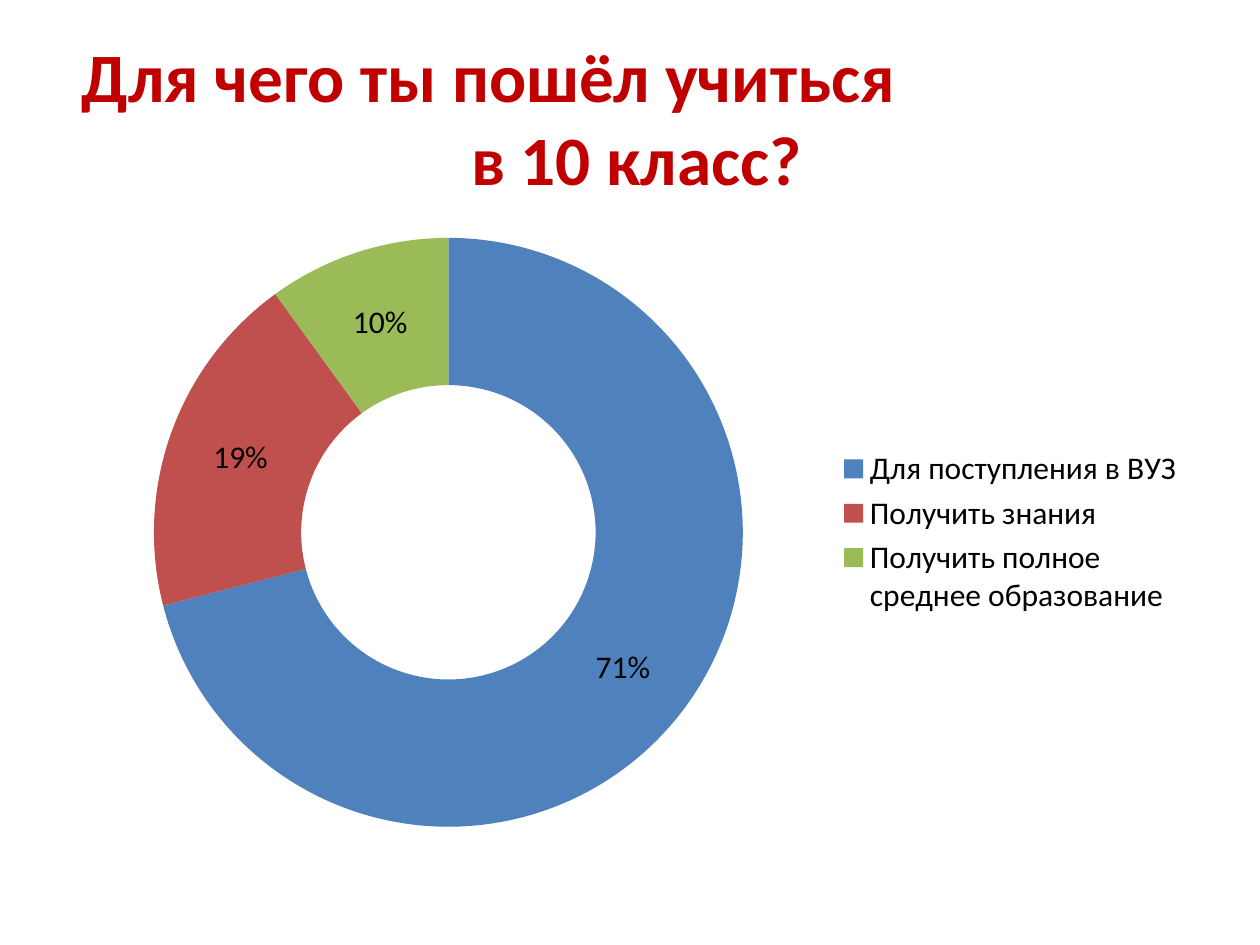
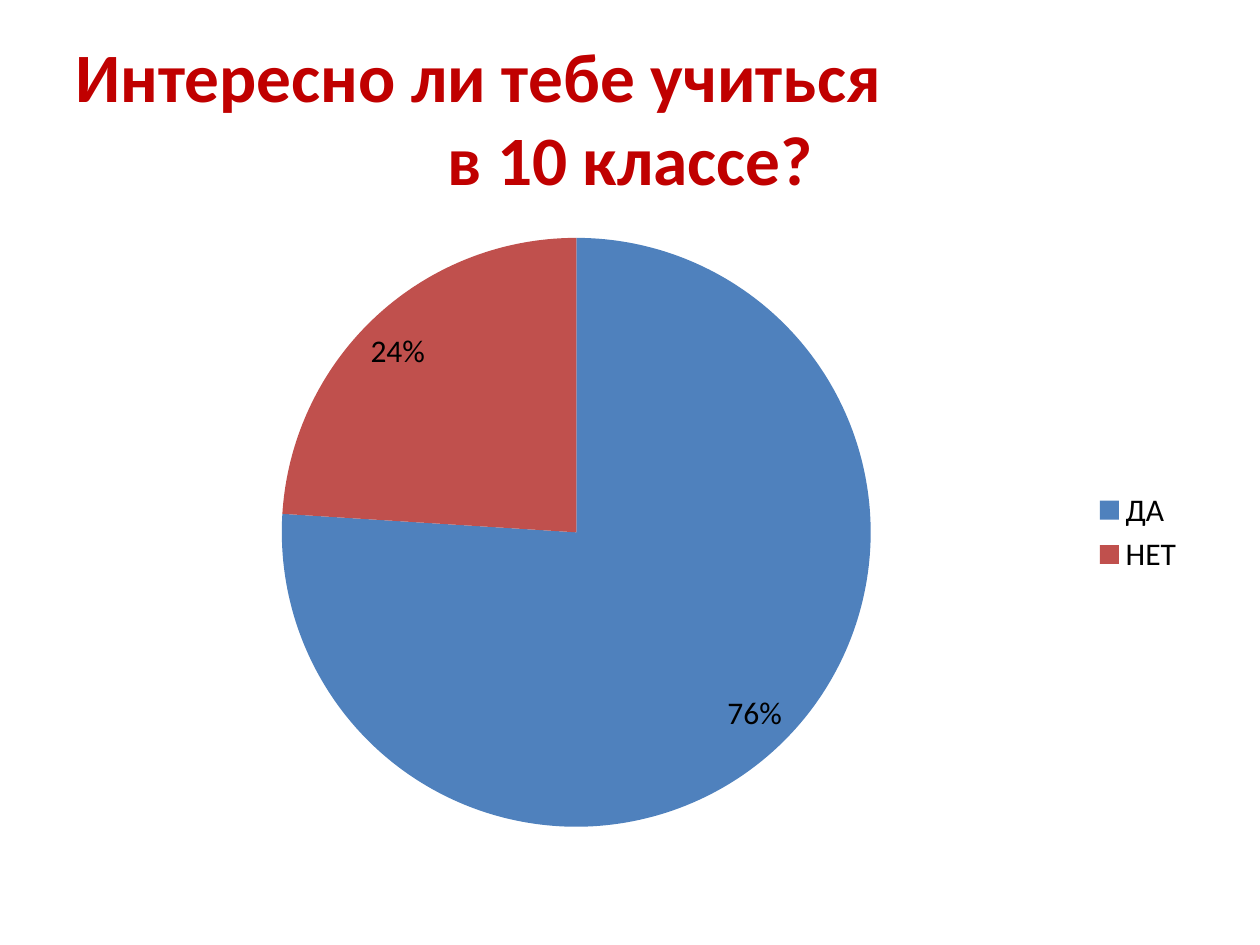
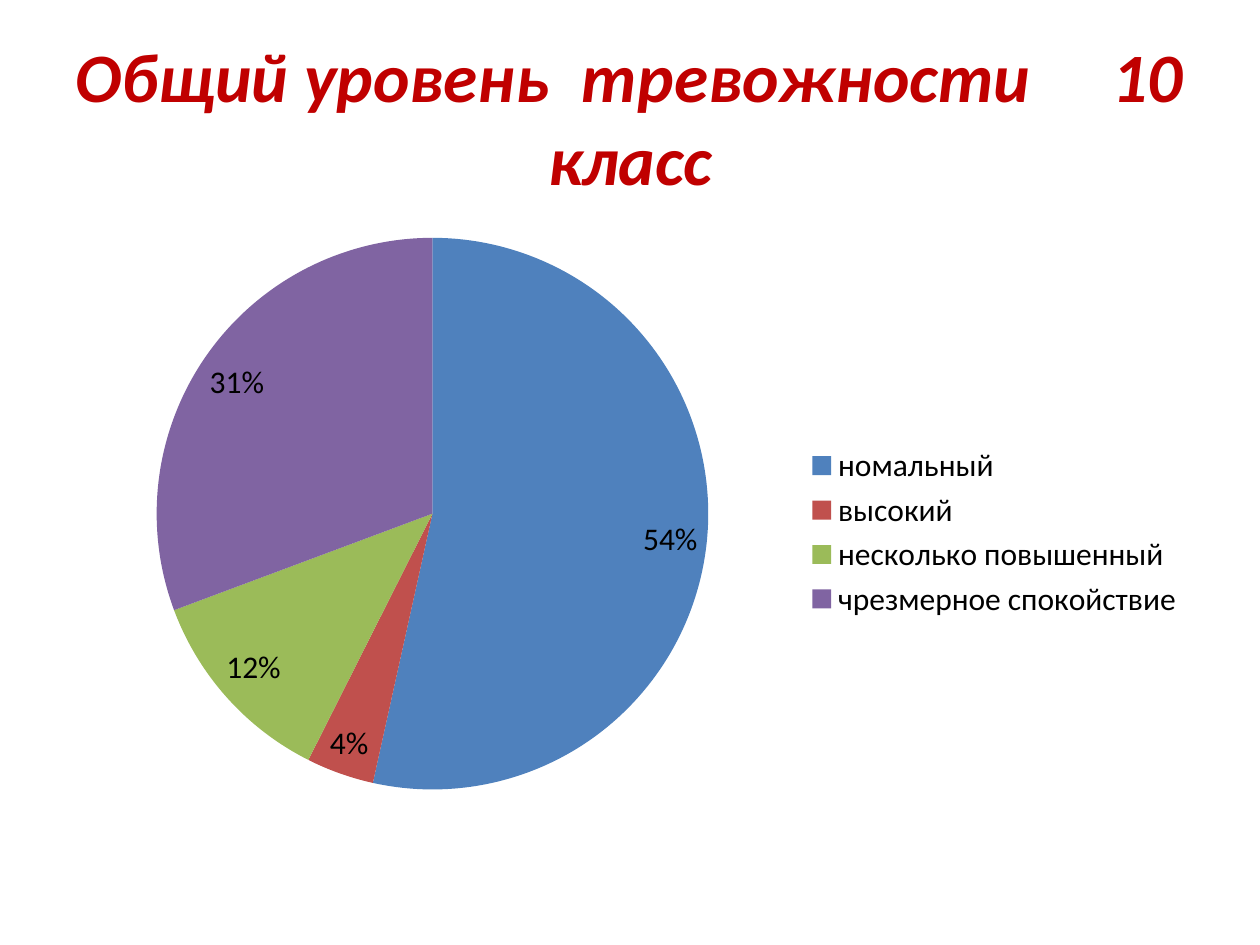
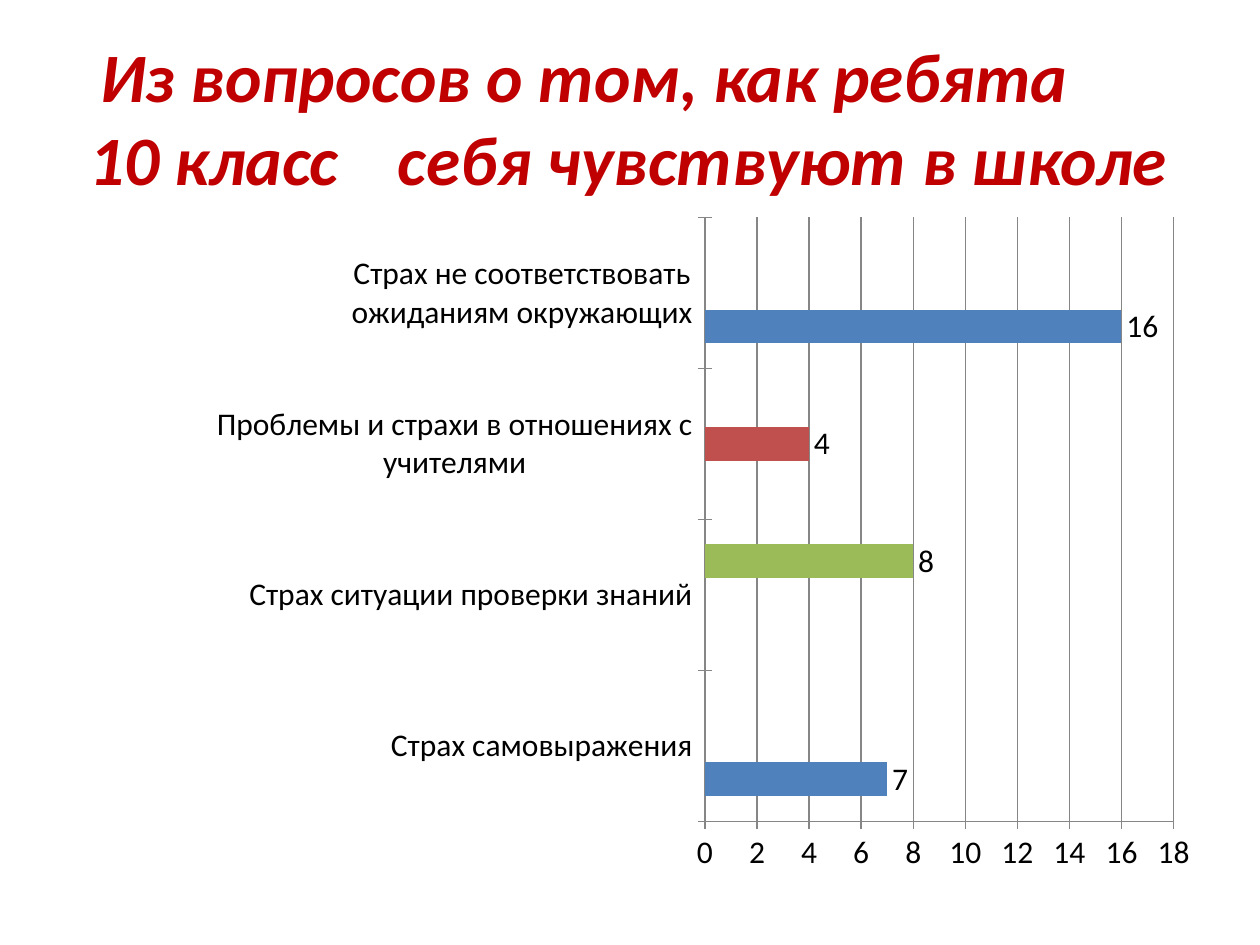
from dataclasses import dataclass

from lxml import etree
from pptx import Presentation
from pptx.chart.data import CategoryChartData
from pptx.dml.color import RGBColor
from pptx.enum.chart import XL_CHART_TYPE, XL_LEGEND_POSITION, XL_TICK_MARK
from pptx.enum.text import MSO_ANCHOR, PP_ALIGN
from pptx.oxml.ns import qn
from pptx.util import Emu, Pt

PX = 9144  # 100 px to the inch


@dataclass(frozen=True)
class Theme:
    font: str = "Calibri"
    background: str = "FFFFFF"
    title: str = "C00000"
    text: str = "000000"
    axis: str = "868686"
    palette: tuple = ("4F81BD", "C0504D", "9BBB59", "8064A2")
    title_size: float = 39.6
    chart_size: float = 18
    title_box: tuple = (50, 30, 900, 125)
    chart_box: tuple = (50, 175, 900, 495)


def px(*lengths):
    return [Emu(length * PX) for length in lengths]


def add_child(parent, tag, **attributes):
    values = {name: str(value) for name, value in attributes.items()}
    return etree.SubElement(parent, qn(tag), values)


def write_line(paragraph, text, *, theme, align=PP_ALIGN.CENTER, indent=0,
               tabs=(), italic=False):
    """Fill one title line; tabs and indent are px from the text edge."""
    paragraph.alignment = align
    properties = paragraph._p.get_or_add_pPr()
    properties.set("marL", str(indent * PX))
    if tabs:
        tab_list = add_child(properties, "a:tabLst")
        for position in tabs:
            add_child(tab_list, "a:tab", pos=position * PX, algn="l")
    run = paragraph.add_run()
    run.text = text
    font = run.font
    font.name, font.size = theme.font, Pt(theme.title_size)
    font.bold, font.italic = True, italic
    font.color.rgb = RGBColor.from_string(theme.title)


def place_plot(chart, left, top, width, height):
    """Fix the inner plot area, as fractions of the chart."""
    plot_area = chart._chartSpace.chart.plotArea
    for old_layout in plot_area.findall(qn("c:layout")):
        plot_area.remove(old_layout)
    layout = etree.Element(qn("c:layout"))
    plot_area.insert(0, layout)
    manual = add_child(layout, "c:manualLayout")
    settings = {"layoutTarget": "inner", "xMode": "edge", "yMode": "edge",
                "x": left, "y": top, "w": width, "h": height}
    for name, value in settings.items():
        add_child(manual, f"c:{name}", val=value)


class Deck:
    def __init__(self, theme):
        self.theme = theme
        self.presentation = Presentation()
        self.presentation.slide_width, self.presentation.slide_height = px(1000, 750)
        self.slide = None

    def new_slide(self):
        self.slide = self.presentation.slides.add_slide(
            self.presentation.slide_layouts[6])
        fill = self.slide.background.fill
        fill.solid()
        fill.fore_color.rgb = RGBColor.from_string(self.theme.background)

    def title(self, *lines, italic=False):
        """Each line is a text and its own format."""
        shape = self.slide.shapes.add_textbox(*px(*self.theme.title_box))
        frame = shape.text_frame
        frame.word_wrap = True
        frame.vertical_anchor = MSO_ANCHOR.MIDDLE
        for number, (text, line_format) in enumerate(lines):
            paragraph = frame.add_paragraph() if number else frame.paragraphs[0]
            write_line(paragraph, text, theme=self.theme, italic=italic, **line_format)

    def chart(self, kind, box, categories, series, number_format="General"):
        data = CategoryChartData(number_format=number_format)
        data.categories = categories
        for number, values in enumerate(series, 1):
            data.add_series(f"Series {number}", values)
        chart = self.slide.shapes.add_chart(kind, *px(*box), data).chart
        chart.has_title = False
        chart.has_legend = False
        chart.font.name = self.theme.font
        chart.font.size = Pt(self.theme.chart_size)
        chart.font.color.rgb = RGBColor.from_string(self.theme.text)
        plot = chart.plots[0]
        plot.has_data_labels = True
        labels = plot.data_labels
        labels.show_value, labels.show_percentage = True, False
        labels.number_format, labels.number_format_is_linked = number_format, False
        return chart

    def paint(self, part, color):
        part.format.fill.solid()
        part.format.fill.fore_color.rgb = RGBColor.from_string(color)

    def share_chart(self, kind, shares, plot_box=None):
        chart = self.chart(kind, self.theme.chart_box, list(shares),
                           [list(shares.values())], "0%")
        chart.has_legend = True
        chart.legend.position = XL_LEGEND_POSITION.RIGHT
        chart.legend.include_in_layout = False
        plot = chart.plots[0]
        plot.vary_by_categories = True
        for number, color in zip(range(len(shares)), self.theme.palette):
            self.paint(plot.series[0].points[number], color)
        if plot_box:
            place_plot(chart, *plot_box)

    def bar_chart(self, box, categories, series, plot_box):
        chart = self.chart(XL_CHART_TYPE.BAR_CLUSTERED, box, categories, series)
        plot = chart.plots[0]
        plot.vary_by_categories = False
        plot.gap_width, plot.overlap = 150, 0
        for one_series, color in zip(plot.series, self.theme.palette):
            self.paint(one_series, color)
        chart.value_axis.has_major_gridlines = True
        for axis in (chart.category_axis, chart.value_axis):
            axis.major_tick_mark = XL_TICK_MARK.CROSS
            axis.minor_tick_mark = XL_TICK_MARK.NONE
            axis.format.line.color.rgb = RGBColor.from_string(self.theme.axis)
        grid_line = chart.value_axis.major_gridlines.format.line
        grid_line.color.rgb = RGBColor.from_string(self.theme.axis)
        place_plot(chart, *plot_box)


def main():
    deck = Deck(Theme())
    left = PP_ALIGN.LEFT

    # Reasons for entering grade 10
    deck.new_slide()
    deck.title(("Для чего ты пошёл учиться", {"align": left, "indent": 5}),
               ("в 10 класс?", {"indent": 10}))
    deck.share_chart(XL_CHART_TYPE.DOUGHNUT, {
        "Для поступления в ВУЗ": 0.71,
        "Получить знания": 0.19,
        "Получить полное среднее образование": 0.1,
    })

    # Interest in studying
    deck.new_slide()
    deck.title(("Интересно ли тебе учиться", {"align": left}),
               ("в 10 классе?", {}))
    deck.share_chart(XL_CHART_TYPE.PIE, {"ДА": 0.76, "НЕТ": 0.24})

    # General anxiety level
    deck.new_slide()
    deck.title(("Общий уровень\tтревожности\t10", {"align": left, "tabs": (402, 823)}),
               ("класс", {}), italic=True)
    deck.share_chart(XL_CHART_TYPE.PIE, {
        "номальный": 0.54,
        "высокий": 0.04,
        "несколько повышенный": 0.12,
        "чрезмерное спокойствие": 0.31,
    })

    # Fears at school
    deck.new_slide()
    deck.title(("Из вопросов о том, как ребята", {"align": left, "indent": 20}),
               ("10 класс\tсебя чувствуют в школе",
                {"align": left, "indent": 11, "tabs": (245,)}), italic=True)
    deck.bar_chart(
        (172, 172, 775, 578),
        ["Страх самовыражения",
         "Страх ситуации проверки знаний",
         "Проблемы и страхи в отношениях с учителями",
         "Страх не соответствовать ожиданиям окружающих"],
        [(7, None, None, 16), (None, None, 4, None), (None, 8, None, None)],
        plot_box=(0.5, 0, 0.48, 0.83))

    deck.presentation.save("out.pptx")


if __name__ == "__main__":
    main()
